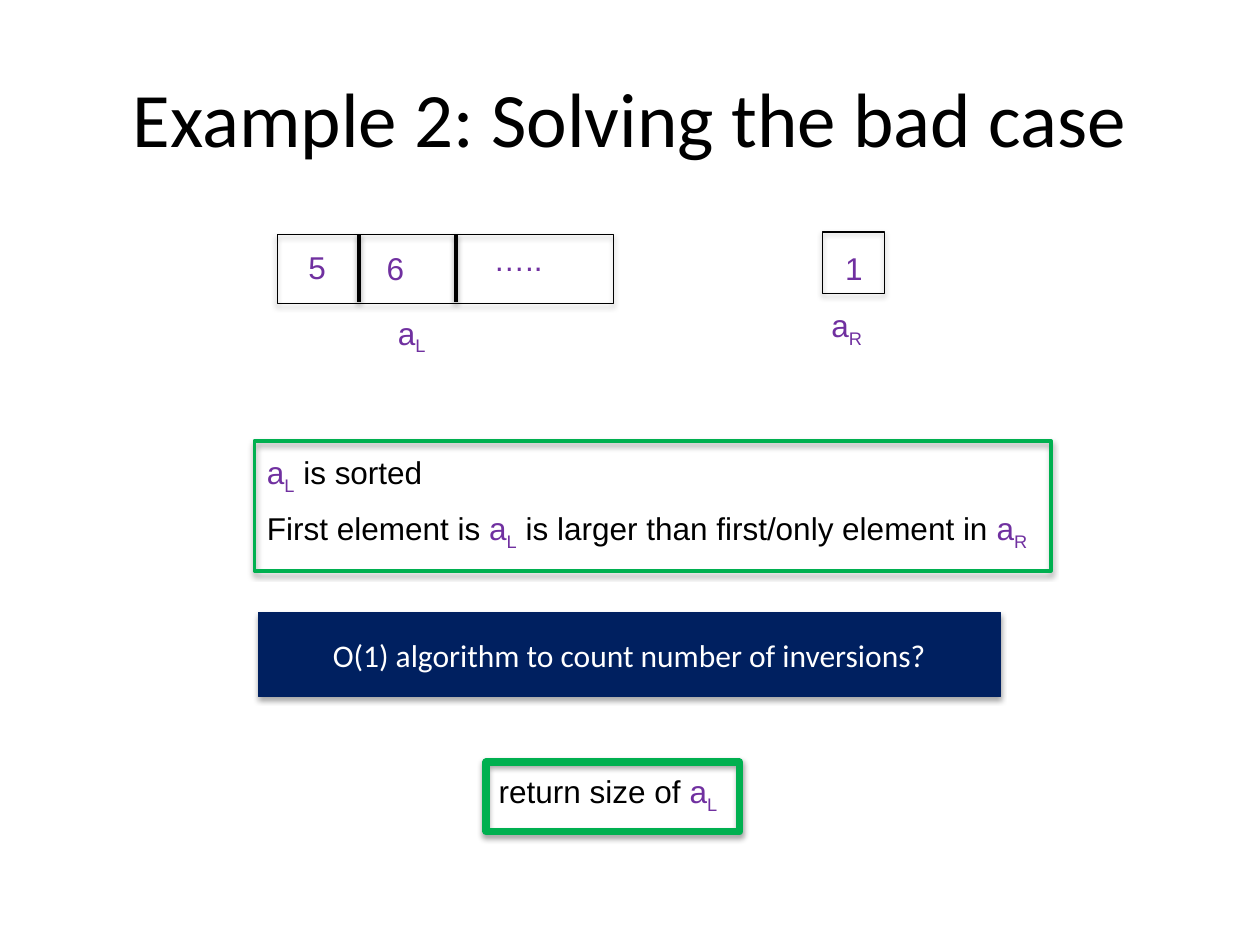
import pptx
import pptx.util
import pptx.dml.color
import pptx.enum.shapes
import pptx.enum.text
import pptx.oxml.ns
from dataclasses import dataclass
from lxml import etree
from pptx.util import Inches

BLACK, WHITE, PURPLE = "000000", "FFFFFF", "7030A0"
GREEN, NAVY = "00B050", "002060"
ALIGN = pptx.enum.text.PP_ALIGN
ANCHOR = pptx.enum.text.MSO_ANCHOR


@dataclass
class Box:
    left: float
    top: float
    width: float
    height: float
    line: str = BLACK
    weight: float = 0.75
    fill: str | None = None


@dataclass
class Label:
    text: str  # |aL| marks a purple "a" with subscript "L"
    left: float
    top: float
    width: float


def color(code: str) -> pptx.dml.color.RGBColor:
    return pptx.dml.color.RGBColor.from_string(code)


def add_run(para, text: str, size: float, font: str, tint: str, sub: bool = False) -> None:
    run = para.add_run()
    run.text = text
    run.font.size = pptx.util.Pt(size)
    run.font.name = font
    run.font.color.rgb = color(tint)
    if sub:
        run._r.get_or_add_rPr().set("baseline", "-25000")


def write(shape, text: str, *, size: float = 18, font: str = "Arial", tint: str = BLACK,
          align=ALIGN.LEFT, anchor=ANCHOR.TOP, wrap: bool = True) -> None:
    frame = shape.text_frame
    frame.word_wrap = wrap
    frame.vertical_anchor = anchor
    if not wrap:
        frame.auto_size = pptx.enum.text.MSO_AUTO_SIZE.SHAPE_TO_FIT_TEXT
    para = frame.paragraphs[0]
    para.alignment = align
    for i, part in enumerate(text.split("|")):
        if i % 2 == 0:
            if part:
                add_run(para, part, size, font, tint)
            continue
        add_run(para, part[0], size, font, PURPLE)
        if part[1:]:
            add_run(para, part[1:], size, font, PURPLE, sub=True)


def add_shadow(shape, alpha: int, dist: int) -> None:
    qn = pptx.oxml.ns.qn
    effects = etree.SubElement(shape._element.spPr, qn("a:effectLst"))
    outer = etree.SubElement(effects, qn("a:outerShdw"), blurRad="40000",
                             dist=str(dist), dir="5400000", rotWithShape="0")
    tone = etree.SubElement(outer, qn("a:srgbClr"), val=BLACK)
    etree.SubElement(tone, qn("a:alpha"), val=str(alpha * 1000))


def add_box(slide, box: Box):
    shape = slide.shapes.add_shape(
        pptx.enum.shapes.MSO_SHAPE.RECTANGLE, Inches(box.left), Inches(box.top),
        Inches(box.width), Inches(box.height))
    if box.fill:
        shape.fill.solid()
        shape.fill.fore_color.rgb = color(box.fill)
    else:
        shape.fill.background()
    shape.line.color.rgb = color(box.line)
    shape.line.width = pptx.util.Pt(box.weight)
    add_shadow(shape, 35, 23000)
    return shape


def add_rule(slide, x: float, top: float, end: float) -> None:
    rule = slide.shapes.add_connector(
        pptx.enum.shapes.MSO_CONNECTOR.STRAIGHT,
        Inches(x), Inches(top), Inches(x), Inches(end))
    rule.line.color.rgb = color(BLACK)
    rule.line.width = pptx.util.Pt(2)
    add_shadow(rule, 38, 20000)


def add_text(slide, left: float, top: float, width: float, height: float,
             text: str, **style) -> None:
    shape = slide.shapes.add_textbox(
        Inches(left), Inches(top), Inches(width), Inches(height))
    write(shape, text, **style)


def add_label(slide, item: Label, **style) -> None:
    add_text(slide, item.left, item.top, item.width, 0.4, item.text, wrap=False, **style)


def main() -> None:
    deck = pptx.Presentation()
    deck.slide_width, deck.slide_height = Inches(10), Inches(7.5)
    slide = deck.slides.add_slide(deck.slide_layouts[6])

    # Title
    add_text(slide, 0.5, 0.3, 9, 1.25, "Example 2: Solving the bad case", size=44,
             font="Calibri", align=ALIGN.CENTER, anchor=ANCHOR.MIDDLE)

    # Left array with its cells, and the one-cell right array
    add_box(slide, Box(2.2, 1.86, 2.67, 0.55))
    for x in (2.85, 3.62):
        add_rule(slide, x, 1.86, 2.4)
    add_box(slide, Box(6.53, 1.84, 0.49, 0.49))
    for item in (Label("5", 2.35, 1.92, 0.34), Label("6", 2.97, 1.93, 0.34),
                 Label("…..", 3.82, 1.86, 0.59), Label("1", 6.61, 1.93, 0.34)):
        add_label(slide, item, tint=PURPLE)

    # Array names, facts and answer
    for item in (Label("|aL|", 3.06, 2.44, 0.43),
                 Label("|aR|", 6.5, 2.38, 0.46),
                 Label("|aL| is sorted", 2.02, 3.55, 1.5),
                 Label("First element is |aL| is larger than first/only element in |aR|",
                       2.02, 3.99, 6.52),
                 Label("return size of |aL|", 3.86, 6.08, 2.01)):
        add_label(slide, item)

    # Green frames
    add_box(slide, Box(2.02, 3.5, 6.32, 1.03, GREEN, 2.25))
    add_box(slide, Box(3.86, 6.05, 2.01, 0.55, GREEN, 4.5))

    # Question banner
    banner = add_box(slide, Box(2.05, 4.86, 5.89, 0.67, NAVY, fill=NAVY))
    write(banner, "O(1) algorithm to count number of inversions?", font="Calibri",
          tint=WHITE, align=ALIGN.CENTER, anchor=ANCHOR.MIDDLE)

    deck.save("out.pptx")


if __name__ == "__main__":
    main()
